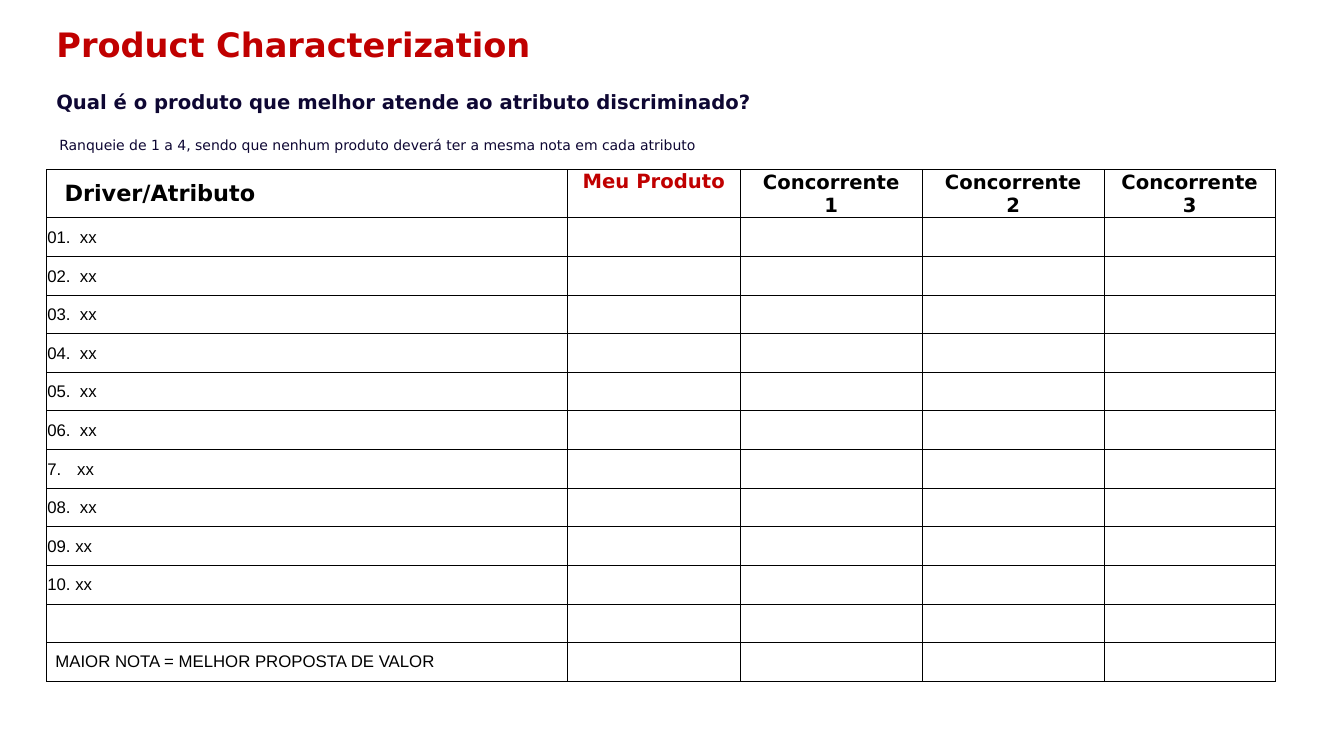
from lxml.etree import SubElement
from pptx import Presentation
from pptx.dml.color import RGBColor
from pptx.enum.text import MSO_ANCHOR as Anchor, PP_ALIGN as Align
from pptx.oxml import parse_xml
from pptx.oxml.ns import nsdecls, qn
from pptx.util import Inches, Pt

RED, NAVY, BLACK = "C00000", "0E0733", "000000"


def color(code):
    return RGBColor.from_string(code)


class Deck:
    head = "DejaVu Sans"
    body = "Arial"

    def __init__(self):
        self.prs = Presentation()
        self.prs.slide_width = Inches(13.33)
        self.prs.slide_height = Inches(7.5)
        self.slide = self.prs.slides.add_slide(self.prs.slide_layouts[6])

    def run(self, para, text, size, tint=BLACK, bold=False, face=None):
        run = para.add_run()
        run.text = text
        font = run.font
        font.name = face or self.head
        font.size, font.bold = Pt(size), bold
        font.color.rgb = color(tint)

    def label(self, box, text, size, tint, bold=False, inset=(0.1, 0.05), space=0.85):
        frame = self.slide.shapes.add_textbox(*map(Inches, box)).text_frame
        frame.word_wrap = True
        frame.vertical_anchor = Anchor.BOTTOM
        frame.margin_left = frame.margin_right = Inches(inset[0])
        frame.margin_top = frame.margin_bottom = Inches(inset[1])
        para = frame.paragraphs[0]
        para.line_spacing = space
        self.run(para, text, size, tint, bold)

    def grid(self, box, widths, heights):
        shape = self.slide.shapes.add_table(len(heights), len(widths), *map(Inches, box))
        table = shape.table
        table.first_row = table.horz_banding = False
        for col, width in zip(table.columns, widths):
            col.width = Inches(width)
        for row, height in zip(table.rows, heights):
            row.height = Inches(height)
        for cell in table.iter_cells():
            self.frame(cell)
        return table

    def frame(self, cell):
        cell.fill.background()
        cell.vertical_anchor = Anchor.MIDDLE
        cell.margin_left = cell.margin_right = cell.margin_top = Inches(0.01)
        cell.margin_bottom = 0
        props = cell._tc.get_or_add_tcPr()
        for spot, side in enumerate("LRTB"):
            props.insert(spot, parse_xml(
                f'<a:ln{side} {nsdecls("a")} w="{Pt(0.5)}"><a:solidFill>'
                f'<a:srgbClr val="{BLACK}"/></a:solidFill></a:ln{side}>'))

    def split(self, para, size):
        """Break the line at the given text size."""
        para.add_line_break()
        mark = SubElement(para._p.findall(qn("a:br"))[-1], qn("a:rPr"))
        mark.set("sz", str(size * 100))

    def indent(self, para, left, first=0, start=None):
        props = para._p.get_or_add_pPr()
        props.set("marL", str(Inches(left)))
        props.set("indent", str(Inches(first)))
        if start:
            num = SubElement(props, qn("a:buAutoNum"))
            num.set("type", "arabicPeriod")
            num.set("startAt", str(start))


def main():
    deck = Deck()

    # Headings
    deck.label((0.56, 0.02, 12, 0.62), "Product Characterization", 24, RED, True, (0, 0), 1)
    deck.label((0.46, 0.88, 12.19, 0.3),
               "Qual é o produto que melhor atende ao atributo discriminado?", 14, NAVY, True)
    deck.label((0.49, 1.32, 10.43, 0.25),
               "Ranqueie de 1 a 4, sendo que nenhum produto deverá ter a mesma nota em cada atributo",
               10, NAVY)

    # Table: header row, then twelve equal rows
    top, full = 0.48, 5.08
    table = deck.grid((0.46, 1.68, 12.19, full), (5.17, 1.71, 1.81, 1.8, 1.7),
                      [top] + [(full - top) / 12] * 12)

    # Header
    first = table.cell(0, 0)
    first.margin_left = Inches(0.18)
    deck.run(first.text_frame.paragraphs[0], "Driver/Atributo", 16, bold=True)
    mine = table.cell(0, 1)
    mine.vertical_anchor = Anchor.TOP
    para = mine.text_frame.paragraphs[0]
    para.alignment = Align.CENTER
    deck.run(para, "Meu Produto", 14, RED, True)
    for rival in (1, 2, 3):
        para = table.cell(0, rival + 1).text_frame.paragraphs[0]
        para.alignment = Align.CENTER
        deck.run(para, "Concorrente", 14, bold=True)
        deck.split(para, 14)
        deck.run(para, str(rival), 14, bold=True)

    # Attributes; the seventh is numbered by its list style
    items = ("01.  xx", "02.  xx", "03.  xx", "04.  xx", "05.  xx",
             "06.  xx", " xx", "08.  xx", "09. xx", "10. xx")
    for row, item in enumerate(items, 1):
        para = table.cell(row, 0).text_frame.paragraphs[0]
        if row == 7:
            deck.indent(para, 0.25, -0.25, row)
        deck.run(para, item, 12, face=deck.body)

    # Closing row
    last = table.cell(12, 0)
    last.margin_top = last.margin_bottom = Inches(0.04)
    para = last.text_frame.paragraphs[0]
    para.space_before = para.space_after = Pt(3)
    deck.indent(para, 0.08)
    deck.run(para, "MAIOR NOTA = MELHOR PROPOSTA DE VALOR", 12, face=deck.body)

    deck.prs.save("out.pptx")


if __name__ == "__main__":
    main()
